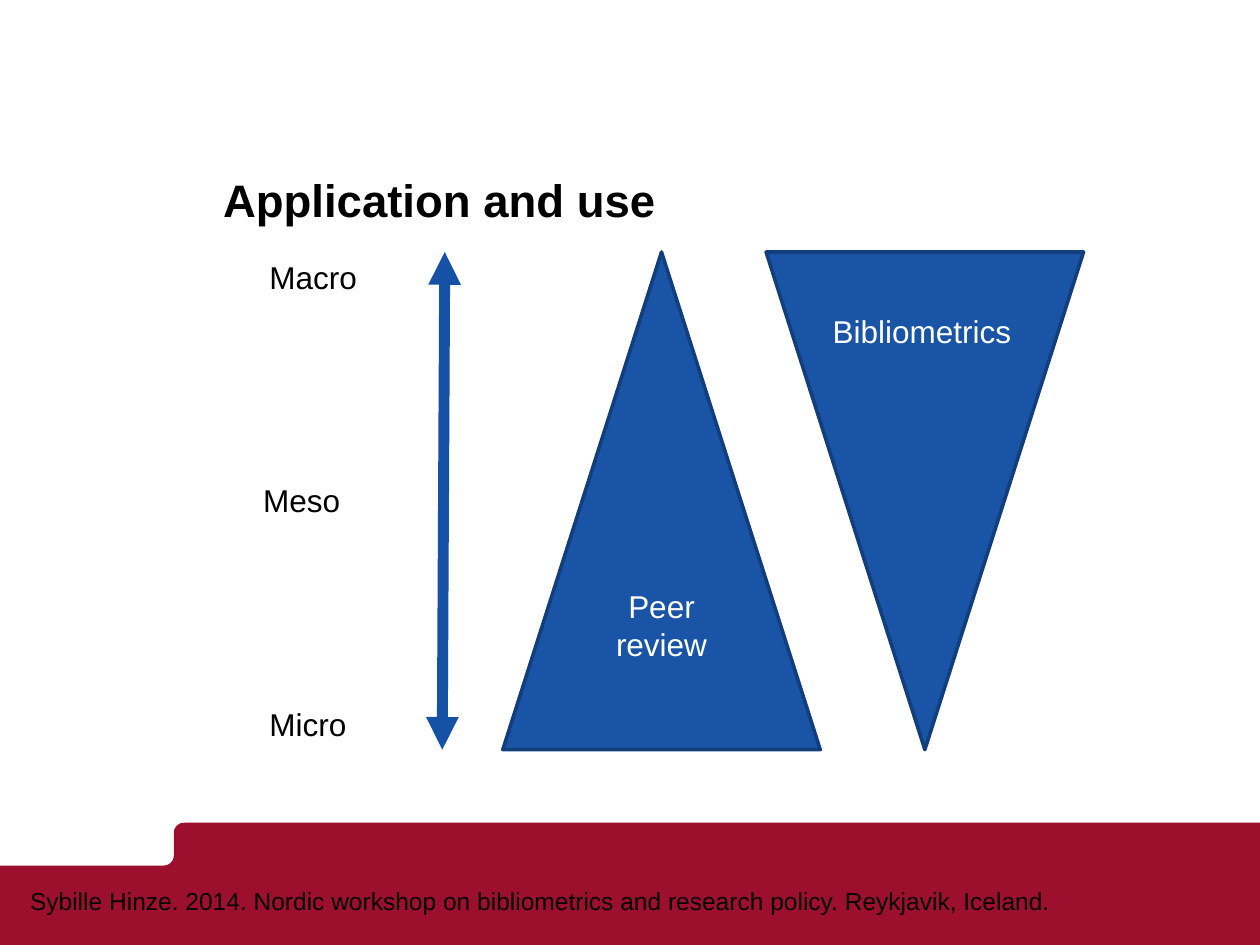
import math
from lxml import etree
from pptx import Presentation, util as u
from pptx.dml.color import RGBColor
from pptx.enum import shapes, text
from pptx.oxml import ns

presentation = Presentation()
presentation.slide_width = u.Inches(10)
presentation.slide_height = u.Inches(7.5)
slide = presentation.slides.add_slide(presentation.slide_layouts[6])
column = presentation.slide_width / 100
row = presentation.slide_height / 75


def cells(left, top, width, height):
    return [round(n * size) for n, size in zip((left, top, width, height), (column, row) * 2)]


def write(shape, wording, size=18, color="000000", bold=False, wrap=False,
          align=text.PP_ALIGN.LEFT, anchor=text.MSO_ANCHOR.TOP, spacing=None, margin=None):
    frame = shape.text_frame
    frame.word_wrap = wrap
    frame.vertical_anchor = anchor
    if margin is not None:
        frame.margin_left = frame.margin_right = margin
        frame.margin_top = frame.margin_bottom = margin
    paragraph = frame.paragraphs[0]
    paragraph.text = wording
    paragraph.alignment = align
    if spacing:
        paragraph.line_spacing = u.Pt(spacing)
    paragraph.font.name = "Arial"
    paragraph.font.size = u.Pt(size)
    paragraph.font.bold = bold
    paragraph.font.color.rgb = RGBColor.from_string(color)


outline = [(100, 65.3), (100, 75), (0, 75), (0, 68.7)]
radius = 0.8
for center_x, center_y, start in ((13, 67.9, 90), (14.6, 66.1, 180)):
    turn = -1 if start == 90 else 1
    for step in range(7):
        angle = math.radians(start + turn * step * 15)
        outline.append((center_x + radius * math.cos(angle), center_y + radius * math.sin(angle)))
points = [(round(x * column), round(y * row)) for x, y in outline]
builder = slide.shapes.build_freeform(*points[0], scale=1.0)
builder.add_line_segments(points[1:], close=True)
footer = builder.convert_to_shape()
footer.shadow.inherit = False
footer.fill.solid()
footer.fill.fore_color.rgb = RGBColor.from_string("9D102D")
footer.line.fill.background()

title = slide.shapes.add_textbox(*cells(17.7, 10.7, 75.9, 7.3))
write(title, "Application and use", size=26, bold=True, wrap=True,
      anchor=text.MSO_ANCHOR.BOTTOM, spacing=30, margin=0)

for left, rotation, wording in ((39.9, 0, "Peer review"), (60.8, 180, "")):
    triangle = slide.shapes.add_shape(
        shapes.MSO_SHAPE.ISOSCELES_TRIANGLE, *cells(left, 20, 25.2, 39.5))
    triangle.rotation = rotation
    triangle.shadow.inherit = False
    triangle.fill.solid()
    triangle.fill.fore_color.rgb = RGBColor.from_string("1954A6")
    triangle.line.color.rgb = RGBColor.from_string("123E7B")
    triangle.line.width = u.Pt(2)
    if wording:
        write(triangle, wording, color="FFFFFF", wrap=True,
              align=text.PP_ALIGN.CENTER, anchor=text.MSO_ANCHOR.MIDDLE)

arrow = slide.shapes.add_connector(shapes.MSO_CONNECTOR.STRAIGHT, *cells(35.3, 20, 35.1, 59.5))
arrow.line.color.rgb = RGBColor.from_string("1552A6")
arrow.line.width = u.Pt(6.25)
properties = arrow.element.spPr
for end in ("a:headEnd", "a:tailEnd"):
    etree.SubElement(properties.find(ns.qn("a:ln")), ns.qn(end), type="triangle")
etree.SubElement(properties, ns.qn("a:effectLst"))

source = slide.shapes.add_textbox(*cells(1.4, 69.8, 97.1, 3.4))
write(source, "Sybille Hinze. 2014. Nordic workshop on bibliometrics and research policy. "
      "Reykjavik, Iceland.", size=14, wrap=True)

for wording, left, top, width, color in (
        ("Bibliometrics", 65.1, 24.3, 16.3, "FFFFFF"),
        ("Macro", 20.4, 20, 9, "000000"),
        ("Micro", 20.4, 55.5, 8.2, "000000"),
        ("Meso", 19.9, 37.7, 8.2, "000000")):
    label = slide.shapes.add_textbox(*cells(left, top, width, 4))
    write(label, wording, color=color)

presentation.save("out.pptx")
